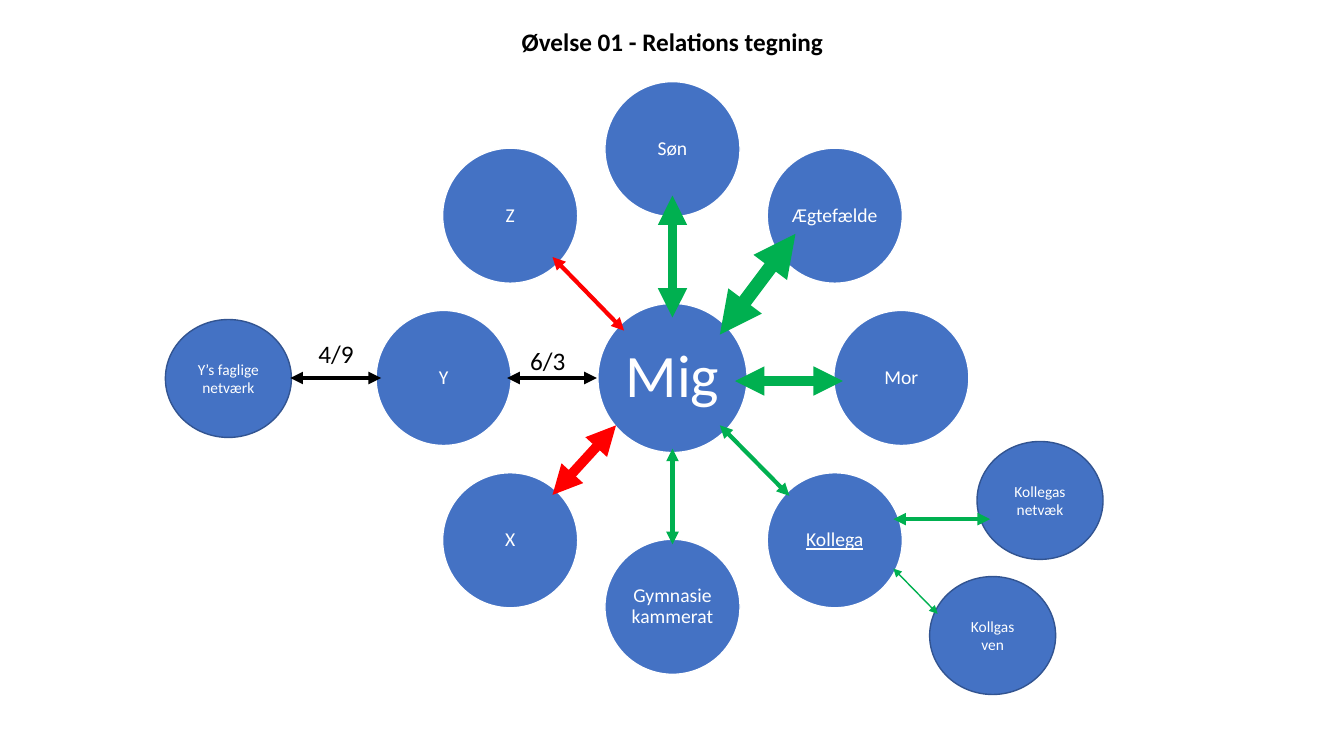
from dataclasses import dataclass
from math import cos, radians, sin

from lxml.etree import SubElement
from pptx import Presentation
from pptx.dml.color import RGBColor
from pptx.enum.shapes import MSO_CONNECTOR as Connector, MSO_SHAPE as Preset
from pptx.enum.text import MSO_ANCHOR as Anchor, PP_ALIGN as Align
from pptx.oxml.ns import qn
from pptx.shapes.autoshape import Shape
from pptx.slide import Slide
from pptx.util import Emu, Pt

EMU_PER_PX = 9144
FONT = "Calibri"
COLOURS = {
    "person": "4472C4",
    "network_edge": "325491",
    "white": "FFFFFF",
    "black": "000000",
    "green": "00B050",
    "red": "FF0000",
}

ME_X, ME_Y = 667, 375
RING_RADIUS = 227
RING_STEP = 45
PERSON_SIZE = 134
NETWORK_WIDTH, NETWORK_HEIGHT = 125, 117


@dataclass(frozen=True)
class Style:
    size: int
    colour: str
    align: Align = Align.CENTER
    anchor: Anchor = Anchor.MIDDLE
    spacing: float = 1.0
    inset_x: int = 10
    inset_y: int = 5
    bold: bool = False
    underline: bool = False


@dataclass(frozen=True)
class Circle:
    name: str
    centre_x: int
    centre_y: int
    width: int
    height: int
    edge: str
    style: Style


@dataclass(frozen=True)
class Relation:
    x1: int
    y1: int
    x2: int
    y2: int
    colour: str
    weight: int


@dataclass(frozen=True)
class Caption:
    text: str
    left: int
    top: int
    width: int
    height: int
    style: Style


TITLE = Style(18, "black", anchor=Anchor.BOTTOM, spacing=0.9, bold=True)
ME = Style(43, "white", spacing=0.9, inset_x=0, inset_y=6)
PERSON = Style(14, "white", spacing=0.9, inset_x=2, inset_y=2)
LINKED_PERSON = Style(14, "white", spacing=0.9, inset_x=2, inset_y=2, underline=True)
NETWORK = Style(11, "white")
SCORE = Style(18, "black", align=Align.LEFT, anchor=Anchor.TOP)

RING = [
    ("Søn", PERSON),
    ("Ægtefælde", PERSON),
    ("Mor", PERSON),
    ("Kollega", LINKED_PERSON),
    ("Gymnasie kammerat", PERSON),
    ("X", PERSON),
    ("Y", PERSON),
    ("Z", PERSON),
]
NETWORKS = [
    ("Kollgas ven", 984, 630),
    ("Kollegas netvæk", 1031, 496),
    ("Y’s faglige netværk", 226, 375),
]
RELATIONS = [
    Relation(789, 232, 714, 332, "green", 10),
    Relation(667, 194, 667, 315, "green", 7),
    Relation(611, 422, 548, 491, "red", 7),
    Relation(503, 375, 592, 375, "black", 3),
    Relation(548, 255, 619, 328, "red", 3),
    Relation(836, 378, 729, 378, "green", 7),
    Relation(667, 540, 667, 445, "green", 3),
    Relation(783, 492, 714, 422, "green", 3),
    Relation(930, 609, 886, 564, "green", 1),
    Relation(982, 515, 886, 515, "green", 3),
    Relation(288, 375, 378, 375, "black", 3),
]
CAPTIONS = [
    Caption("Øvelse 01 - Relations tegning", 167, 22, 1000, 39, TITLE),
    Caption("6/3", 516, 338, 63, 40, SCORE),
    Caption("4/9", 306, 331, 63, 40, SCORE),
]


def px(length: int) -> Emu:
    return Emu(length * EMU_PER_PX)


def rgb(colour: str) -> RGBColor:
    return RGBColor.from_string(COLOURS[colour])


def write(holder: Shape, text: str, style: Style) -> None:
    frame = holder.text_frame
    frame.word_wrap = True
    frame.vertical_anchor = style.anchor
    frame.margin_left = frame.margin_right = px(style.inset_x)
    frame.margin_top = frame.margin_bottom = px(style.inset_y)
    paragraph = frame.paragraphs[0]
    paragraph.alignment = style.align
    paragraph.line_spacing = style.spacing
    run = paragraph.add_run()
    run.text = text
    run.font.name = FONT
    run.font.size = Pt(style.size)
    run.font.bold = style.bold
    run.font.underline = style.underline
    run.font.color.rgb = rgb(style.colour)


def draw_circle(slide: Slide, circle: Circle) -> None:
    disc = slide.shapes.add_shape(
        Preset.OVAL,
        px(circle.centre_x - circle.width // 2),
        px(circle.centre_y - circle.height // 2),
        px(circle.width),
        px(circle.height),
    )
    disc.shadow.inherit = False
    disc.fill.solid()
    disc.fill.fore_color.rgb = rgb("person")
    disc.line.color.rgb = rgb(circle.edge)
    disc.line.width = Pt(1)
    write(disc, circle.name, circle.style)


def draw_relation(slide: Slide, relation: Relation) -> None:
    arrow = slide.shapes.add_connector(
        Connector.STRAIGHT,
        px(relation.x1), px(relation.y1), px(relation.x2), px(relation.y2),
    )
    arrow.line.color.rgb = rgb(relation.colour)
    arrow.line.width = Pt(relation.weight)
    properties = arrow._element.spPr
    outline = properties.find(qn("a:ln"))
    for end in ("a:headEnd", "a:tailEnd"):
        SubElement(outline, qn(end), type="triangle")
    SubElement(properties, qn("a:effectLst"))


def draw_caption(slide: Slide, caption: Caption) -> None:
    box = slide.shapes.add_textbox(
        px(caption.left), px(caption.top), px(caption.width), px(caption.height)
    )
    write(box, caption.text, caption.style)


def ring_circle(position: int, name: str, style: Style) -> Circle:
    angle = radians(position * RING_STEP)
    return Circle(
        name,
        round(ME_X + RING_RADIUS * sin(angle)),
        round(ME_Y - RING_RADIUS * cos(angle)),
        PERSON_SIZE,
        PERSON_SIZE,
        "white",
        style,
    )


def main() -> None:
    deck = Presentation()
    deck.slide_width, deck.slide_height = px(1333), px(750)
    slide = deck.slides.add_slide(deck.slide_layouts[6])
    draw_circle(slide, Circle("Mig", ME_X, ME_Y, 148, 148, "white", ME))
    for position, (name, style) in enumerate(RING):
        draw_circle(slide, ring_circle(position, name, style))
    for name, x, y in NETWORKS:
        draw_circle(slide, Circle(
            name, x, y, NETWORK_WIDTH, NETWORK_HEIGHT, "network_edge", NETWORK
        ))
    for relation in RELATIONS:
        draw_relation(slide, relation)
    for caption in CAPTIONS:
        draw_caption(slide, caption)
    deck.save("out.pptx")


if __name__ == "__main__":
    main()
